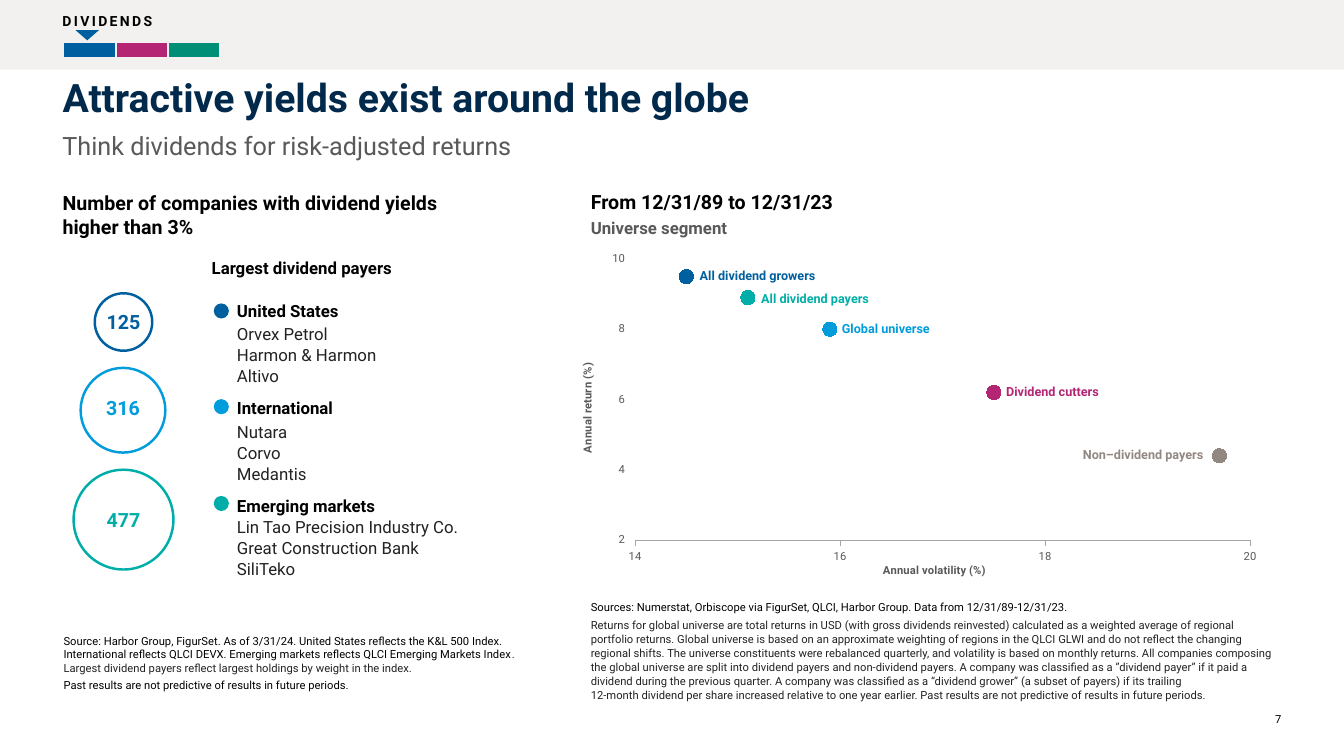
from lxml import etree
from pptx import Presentation
from pptx import util as u
from pptx.chart import data as chart_data
from pptx.dml import color
from pptx.enum import chart as chart_enum, shapes, text
from pptx.oxml import parse_xml
from pptx.oxml import ns

PX = 9144
FONT = "Roboto"
COLORS = {name: color.RGBColor.from_string(value) for name, value in {
    "band": "F2F1F0", "white": "FFFFFF", "black": "000000", "ink": "222222",
    "navy": "00294B", "gray": "595959", "axis": "A6A6A6", "blue": "005F9E",
    "sky": "009CDC", "teal": "00AEA9", "magenta": "B42573",
    "green": "008E77", "taupe": "938881"}.items()}


def write(target, paragraphs, wrap=True, anchor=text.MSO_ANCHOR.TOP):
    frame = target.text_frame
    settings = {"margin_left": 0, "margin_top": 0, "margin_right": 0, "margin_bottom": 0,
                "auto_size": text.MSO_AUTO_SIZE.NONE, "word_wrap": wrap,
                "vertical_anchor": anchor}
    for name, value in settings.items():
        setattr(frame, name, value)
    for index, (layout, *runs) in enumerate(paragraphs):
        paragraph = frame.add_paragraph() if index else frame.paragraphs[0]
        for name, value in layout.items():
            setattr(paragraph, name, value)
        for words, size, tone, bold in runs:
            for number, line in enumerate(words.split("\n")):
                if number:
                    paragraph.add_line_break()
                run = paragraph.add_run()
                run.text = line
                for name, value in {"name": FONT, "size": u.Pt(size), "bold": bold}.items():
                    setattr(run.font, name, value)
                run.font.color.rgb = COLORS[tone]


def draw(kind, box, fill, line=None):
    figure = slide.shapes.add_shape(kind, *(PX * side for side in box))
    figure.shadow.inherit = False
    figure.fill.solid()
    figure.fill.fore_color.rgb = COLORS[fill]
    if line:
        figure.line.color.rgb = COLORS[line]
        figure.line.width = u.Pt(1.75)
    else:
        figure.line.fill.background()
    return figure


deck = Presentation()
deck.slide_width, deck.slide_height = 1333 * PX, 750 * PX
slide = deck.slides.add_slide(deck.slide_layouts[5])

draw(shapes.MSO_SHAPE.RECTANGLE, (0, 0, 1333, 69), "band")
pointer = draw(shapes.MSO_SHAPE.ISOSCELES_TRIANGLE, (75, 30, 23, 10), "blue")
pointer.rotation = 180

headline = slide.shapes.title
for name, value in {"left": 62, "top": 76, "width": 1208, "height": 90}.items():
    setattr(headline, name, value * PX)
LEFT = {"alignment": text.PP_ALIGN.LEFT}
write(headline, [({**LEFT, "line_spacing": 0.95},
                  ("Attractive yields exist around the globe", 28, "navy", True))])

tabs = slide.shapes.add_table(1, 3, 63 * PX, 42 * PX, 155 * PX, 15 * PX).table
tabs.rows[0].height = 15 * PX
for column, cell, tone in zip(tabs.columns, tabs.rows[0].cells, ("blue", "magenta", "green")):
    column.width = 155 * PX // 3
    for side in ("left", "top", "right", "bottom"):
        setattr(cell, f"margin_{side}", 0)
    ending = etree.SubElement(cell.text_frame.paragraphs[0]._p, ns.qn("a:endParaRPr"))
    ending.set("sz", "400")
    properties = cell._tc.get_or_add_tcPr()
    for edge in ("lnL", "lnR", "lnT", "lnB"):
        properties.append(parse_xml(
            f'<a:{edge} {ns.nsdecls("a")} w="19050"><a:solidFill>'
            f'<a:srgbClr val="{COLORS["band"]}"/></a:solidFill></a:{edge}>'))
    cell.fill.solid()
    cell.fill.fore_color.rgb = COLORS[tone]

HEAD = {"space_after": u.Pt(2)}
NAMES = {"line_spacing": u.Pt(15), "space_after": u.Pt(8)}
TIGHT = {"line_spacing": u.Pt(15)}
NOTE = {"space_after": u.Pt(3)}
FINE = {"line_spacing": u.Pt(10), "space_after": u.Pt(3)}

passages = [
    ((62, 188, 478, 59), [({"line_spacing": u.Pt(17.5)}, (
        "Number of companies with dividend yields\nhigher than 3%", 14, "black", True))]),
    ((210, 256, 233, 20), [({}, ("Largest dividend payers", 12, "black", True))]),
    ((235, 298, 290, 278), [
        (HEAD, ("United States", 12, "black", True)),
        (NAMES, ("Orvex Petrol\nHarmon & Harmon\nAltivo", 12, "ink", False)),
        (HEAD, ("International", 12, "black", True)),
        (NAMES, ("Nutara\nCorvo\nMedantis", 12, "ink", False)),
        (TIGHT, ("Emerging markets", 12, "black", True)),
        (TIGHT, ("Lin Tao Precision Industry Co.", 12, "ink", False)),
        (TIGHT, ("Great Construction Bank", 12, "ink", False)),
        (TIGHT, ("SiliTeko", 12, "ink", False))]),
    ((63, 629, 462, 58), [
        (NOTE, ("Source: Harbor Group, FigurSet. As of 3/31/24. United States reflects the "
                "K&L 500 Index. International reflects QLCI DEVX. Emerging markets reflects "
                "QLCI Emerging Markets Index", 8, "black", False),
         (". Largest dividend payers reflect largest holdings by weight in the index.",
          8, "ink", False)),
        (NOTE, ("Past results are not predictive of results in future periods.",
                8, "black", False))]),
    ((62, 129, 870, 34), [({"space_before": u.Pt(6)}, (
        "Think dividends for risk-adjusted returns", 18, "gray", False))]),
    ((586, 188, 565, 24), [({}, ("From 12/31/89 to 12/31/23", 14, "black", True))]),
    ((586, 216, 536, 20), [({"space_before": u.Pt(6)}, (
        "Universe segment", 12, "gray", True))]),
    ((586, 595, 684, 105), [
        (FINE, ("Sources: Numerstat, Orbiscope via FigurSet, QLCI, Harbor Group. "
                "Data from 12/31/89-12/31/23.", 8, "black", False)),
        (FINE, ("Returns for global universe are total returns in USD (with gross dividends "
                "reinvested) calculated as a weighted average of regional portfolio returns. "
                "Global universe is based on an approximate weighting of regions in the QLCI "
                "GLWI and do not reflect the changing regional shifts. The universe "
                "constituents were rebalanced quarterly, and volatility is based on monthly "
                "returns. All companies composing the global universe are split into dividend "
                "payers and non-dividend payers. A company was classified as a ”dividend payer” "
                "if it paid a dividend during the previous quarter. A company was classified as "
                "a “dividend grower” (a subset of payers) if its trailing\n12-month dividend "
                "per share increased relative to one year earlier. Past results are not "
                "predictive of results in future periods.", 8, "ink", False))]),
    ((1193, 707, 78, 14), [({"alignment": text.PP_ALIGN.RIGHT}, ("7", 8, "black", False))]),
]
for box, paragraphs in passages:
    write(slide.shapes.add_textbox(*(PX * side for side in box)), paragraphs)

section = slide.shapes.add_textbox(62 * PX, 12 * PX, 123 * PX, 17 * PX)
write(section, [({}, ("DIVIDENDS", 10, "black", True))])
section.text_frame.paragraphs[0].runs[0]._r.get_or_add_rPr().set("spc", "170")

CENTER = {"alignment": text.PP_ALIGN.CENTER}
regions = [("125", "blue", 94, 291, 57, 301, 0), ("316", "sky", 80, 365, 84, 396, 6),
           ("477", "teal", 73, 466, 99, 492, 0)]
for count, tone, left, top, size, dot_top, lift in regions:
    draw(shapes.MSO_SHAPE.OVAL, (212, dot_top, 15, 15), tone)
    ring = draw(shapes.MSO_SHAPE.OVAL, (left, top, size, size), "white", tone)
    write(ring, [(CENTER, (count, 14, tone, True))], False, text.MSO_ANCHOR.MIDDLE)
    ring.text_frame.margin_bottom = lift * PX

segments = [
    ("All dividend growers", "blue", 14.5, 9.5, (694, 266, 122, 15)),
    ("All dividend payers", "teal", 15.1, 8.9, (755, 289, 113, 15)),
    ("Global universe", "sky", 15.9, 8, (835, 318, 92, 15)),
    ("Dividend cutters", "magenta", 17.5, 6.2, (998, 381, 96, 15)),
    ("Non–dividend payers", "taupe", 19.7, 4.4, (1074, 443, 124, 15))]
points = chart_data.XyChartData()
for number, (label, *rest) in enumerate(segments, 1):
    column = points.add_series(f"Series {number}")
    for name, tone, volatility, gain, box in segments:
        column.add_data_point(volatility, gain if name == label else None)
scatter = slide.shapes.add_chart(chart_enum.XL_CHART_TYPE.XY_SCATTER, 561 * PX, 244 * PX,
                                 704 * PX, 332 * PX, points).chart
for point in list(scatter._chartSpace.iter(ns.qn("c:pt"))):
    if point.findtext(ns.qn("c:v")) in ("None", "", None):
        point.getparent().remove(point)
for name, value in {"has_legend": False, "has_title": False}.items():
    setattr(scatter, name, value)
for name, value in {"name": FONT, "size": u.Pt(8)}.items():
    setattr(scatter.font, name, value)
scatter.font.color.rgb = COLORS["gray"]
scatter.plots[0].vary_by_categories = False

axes = [(scatter.category_axis, "Annual volatility (%)", 14, 20),
        (scatter.value_axis, "Annual return (%)", 2, 10)]
for axis, caption, low, high in axes:
    settings = {"minimum_scale": low, "maximum_scale": high, "major_unit": 2,
                "has_major_gridlines": False, "has_minor_gridlines": False,
                "major_tick_mark": chart_enum.XL_TICK_MARK.OUTSIDE,
                "minor_tick_mark": chart_enum.XL_TICK_MARK.NONE}
    for name, value in settings.items():
        setattr(axis, name, value)
    axis.tick_labels.number_format = "#,##0"
    axis.tick_labels.number_format_is_linked = False
    write(axis.axis_title, [({}, (caption, 8, "gray", True))])
scatter.category_axis.format.line.color.rgb = COLORS["axis"]
scatter.category_axis.format.line.width = u.Pt(0.5)
scatter.value_axis.format.line.fill.background()

plot_area = scatter._chartSpace.chart.plotArea
for layout in plot_area.findall(ns.qn("c:layout")):
    plot_area.remove(layout)
frame = {"x": 69 / 704, "y": 13 / 332, "w": 610 / 704, "h": 279 / 332}
modes = '<c:layoutTarget val="inner"/><c:xMode val="edge"/><c:yMode val="edge"/>'
sizes = "".join(f'<c:{side} val="{share}"/>' for side, share in frame.items())
plot_area.insert(0, parse_xml(f'<c:layout {ns.nsdecls("c")}><c:manualLayout>{modes}{sizes}'
                              '</c:manualLayout></c:layout>'))

for series, (label, tone, volatility, gain, box) in zip(scatter.plots[0].series, segments):
    series.format.line.fill.background()
    series.marker.style = chart_enum.XL_MARKER_STYLE.CIRCLE
    series.marker.size = 10
    series.marker.format.fill.solid()
    series.marker.format.fill.fore_color.rgb = COLORS[tone]
    series.marker.format.line.fill.background()
    write(slide.shapes.add_textbox(*(PX * side for side in box)),
          [({}, (label, 9, tone, True))], False)

deck.save("out.pptx")
